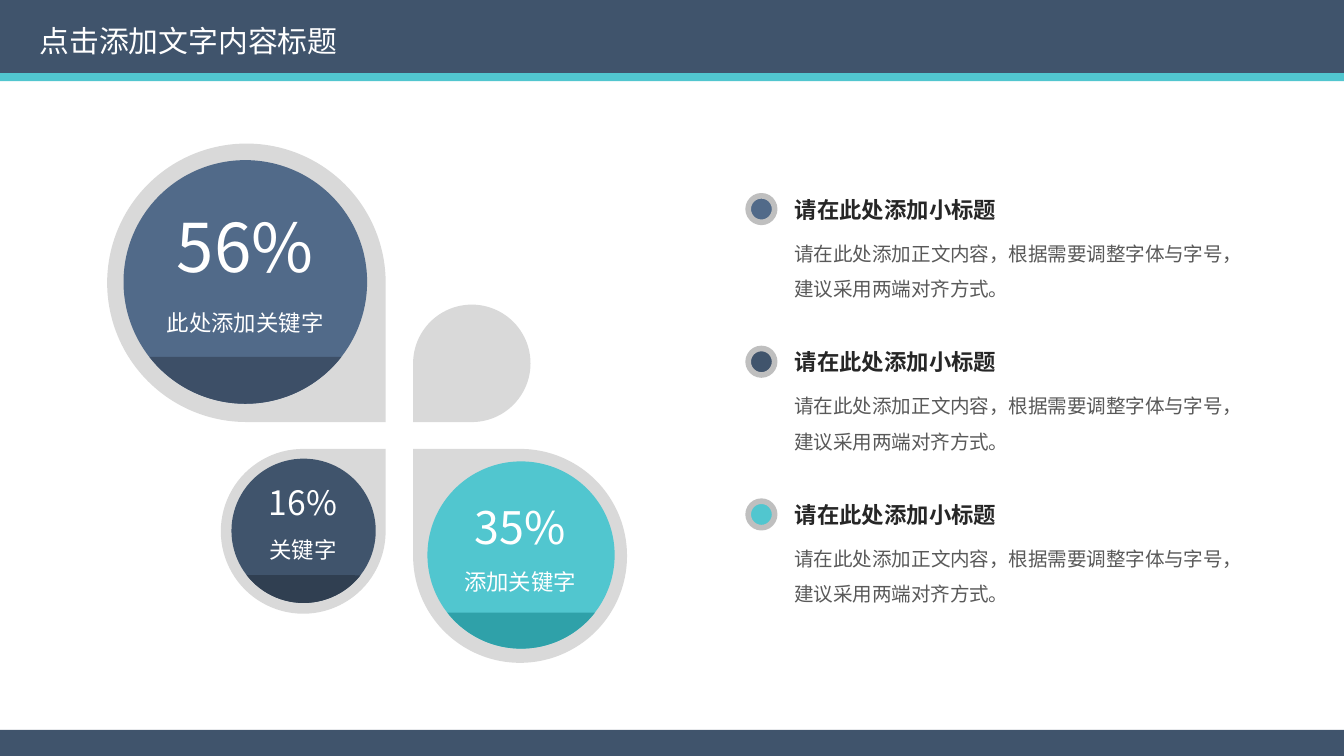
from dataclasses import dataclass

from lxml.etree import SubElement
from pptx import Presentation
from pptx.dml.color import RGBColor
from pptx.enum.shapes import MSO_SHAPE as Shape
from pptx.enum.text import MSO_AUTO_SIZE as AutoSize, PP_ALIGN as Align
from pptx.oxml.ns import qn
from pptx.util import Pt

FONT = "Noto Sans CJK SC"
COLORS = {
    "navy": "40546C",
    "blue": "516A89",
    "teal": "51C6CF",
    "blue_dark": "3D4F67",
    "navy_dark": "303F51",
    "teal_dark": "2FA1A9",
    "petal": "D9D9D9",
    "ring": "BFBFBF",
    "heading": "262626",
    "body": "595959",
    "white": "FFFFFF",
}
SLIDE_W, SLIDE_H = 720, 405
ITEM_TOP, ITEM_STEP = 101.4, 81.8
HEADING = "请在此处添加小标题"
BODY = "请在此处添加正文内容，根据需要调整字体与字号，建议采用两端对齐方式。"


@dataclass
class Box:
    left: float
    top: float
    width: float
    height: float

    def emu(self) -> tuple:
        return Pt(self.left), Pt(self.top), Pt(self.width), Pt(self.height)


@dataclass
class Label:
    text: str
    box: Box
    size: float
    spacing: float = 1.0


@dataclass
class Petal:
    drop: Box
    rotation: int
    disc: Box
    color: str
    shade: str
    labels: tuple


def square(left: float, top: float, side: float) -> Box:
    return Box(left, top, side, side)


PETALS = [
    Petal(square(57.4, 76.9, 149.2), 90, square(66.2, 85.8, 130.5), "blue", "blue_dark", (
        Label("此处添加关键字", Box(76.8, 154.8, 109.2, 26.6), 12, 1.5),
        Label("56%", Box(76.8, 106.6, 109.2, 51), 36))),
    Petal(square(221.3, 240.5, 114.6), 270, square(229, 247.2, 100.3), "teal", "teal_dark", (
        Label("添加关键字", Box(229.7, 301, 97.9, 21.8), 12),
        Label("35%", Box(242.6, 264.2, 72, 36.3), 24))),
    Petal(square(118.3, 240.5, 88.3), 0, square(124, 245.7, 77.3), "navy", "navy_dark", (
        Label("关键字", Box(124.6, 283.7, 75.6, 21.8), 12),
        Label("16%", Box(132.5, 254.9, 59.8, 29.1), 18))),
]


def rgb(name: str) -> RGBColor:
    return RGBColor.from_string(COLORS[name])


def add_filled(shapes, kind: Shape, box: Box, color: str, rotation: int = 0):
    sp = shapes.add_shape(kind, *box.emu())
    sp.shadow.inherit = False
    sp.fill.solid()
    sp.fill.fore_color.rgb = rgb(color)
    sp.line.fill.background()
    sp.rotation = rotation
    return sp


def add_text(shapes, label: Label, color: str, align: Align = Align.LEFT,
             bold: bool = False, wrap: bool = True) -> None:
    tf = shapes.add_textbox(*label.box.emu()).text_frame
    tf.word_wrap = wrap
    tf.auto_size = AutoSize.SHAPE_TO_FIT_TEXT
    tf.text = label.text
    p = tf.paragraphs[0]
    p.alignment = align
    p.line_spacing = label.spacing
    r = p.runs[0]
    r.font.size = Pt(label.size)
    r.font.bold = bold
    r.font.color.rgb = rgb(color)
    r.font.name = FONT
    SubElement(r.font._element, qn("a:ea"), typeface=FONT)


def add_petal(slide, petal: Petal) -> None:
    """Draw a teardrop holding a disc with a darker bottom segment and labels."""
    shapes = slide.shapes.add_group_shape().shapes
    add_filled(shapes, Shape.TEAR, petal.drop, "petal", petal.rotation)
    add_filled(shapes, Shape.OVAL, petal.disc, petal.color)
    segment = add_filled(shapes, Shape.CHORD, petal.disc, petal.shade, 180)
    segment.adjustments[0] = 130.81
    segment.adjustments[1] = 193.26
    for label in petal.labels:
        add_text(shapes, label, "white", Align.CENTER)


def add_item(slide, top: float, color: str) -> None:
    """Draw a ringed bullet with its heading and body text."""
    shapes = slide.shapes.add_group_shape().shapes
    bullet = add_filled(shapes, Shape.OVAL, square(400.8, top + 3.5, 14.2), color)
    bullet.line.color.rgb = rgb("ring")
    bullet.line.width = Pt(3)
    add_text(shapes, Label(HEADING, Box(418.7, top, 179.3, 21.8), 12), "heading", bold=True)
    add_text(shapes, Label(BODY, Box(418.5, top + 18.3, 244, 45.4), 10.5, 1.5),
             "body", Align.JUSTIFY)


def main() -> None:
    prs = Presentation()
    prs.slide_width, prs.slide_height = Pt(SLIDE_W), Pt(SLIDE_H)
    slide = prs.slides.add_slide(prs.slide_layouts[6])

    for top, height, color in [(0, 39.4, "navy"), (39.2, 4.3, "teal"), (391, 14, "navy")]:
        add_filled(slide.shapes, Shape.RECTANGLE, Box(0, top, SLIDE_W, height), color)
    for petal in PETALS:
        add_petal(slide, petal)
    for i, color in enumerate(["blue", "navy", "teal"]):
        add_item(slide, ITEM_TOP + i * ITEM_STEP, color)
    add_filled(slide.shapes, Shape.TEAR, square(221.3, 163.2, 62.9), "petal", 180)
    title = Label("点击添加文字内容标题", Box(14.2, 8.6, 176.4, 26.6), 16)
    add_text(slide.shapes, title, "white", wrap=False)

    prs.save("out.pptx")


if __name__ == "__main__":
    main()
